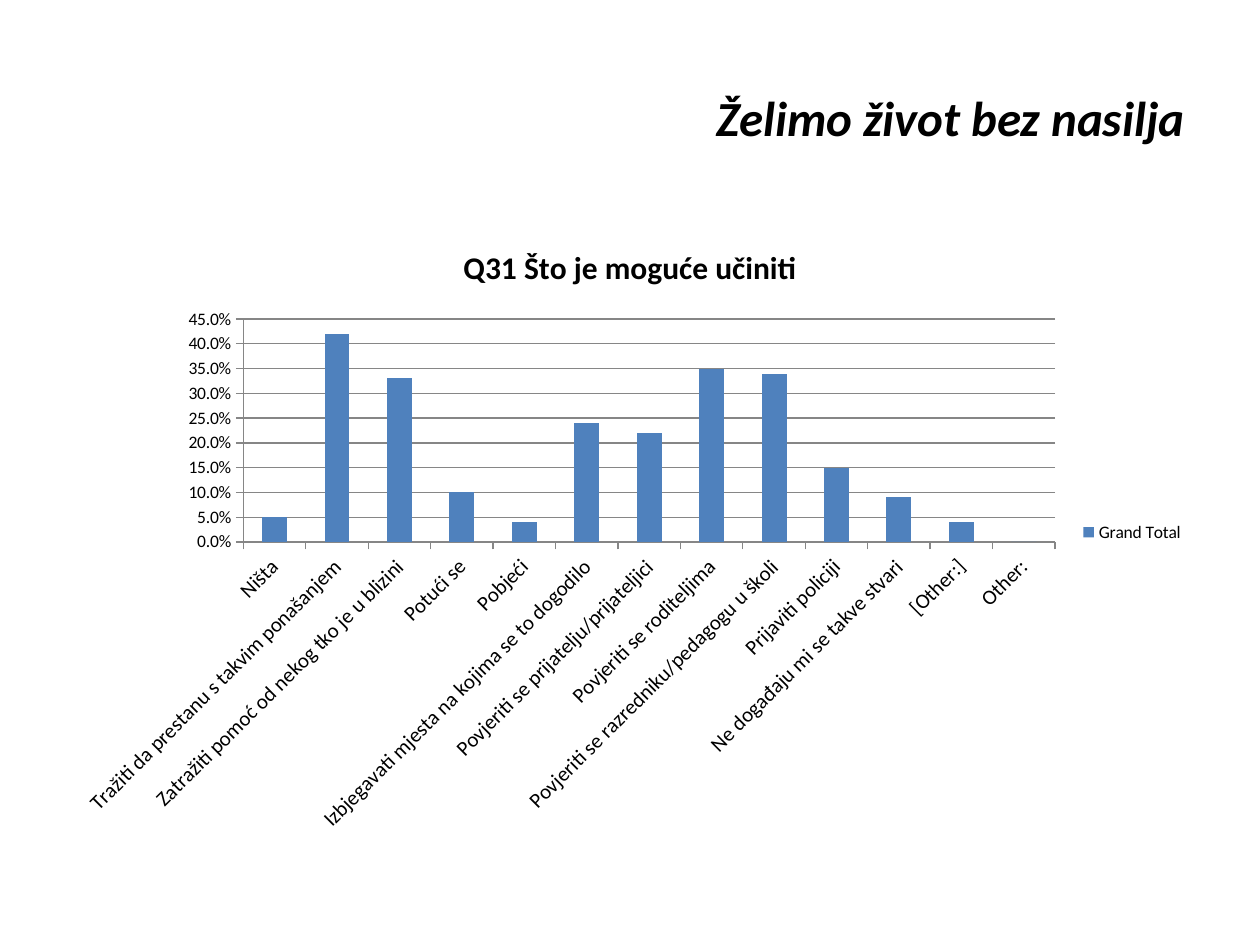
"""Build the survey slide with one column chart."""
from typing import Any, NamedTuple

from pptx import Presentation
from pptx.chart.data import CategoryChartData
from pptx.dml.color import RGBColor
from pptx.enum.chart import XL_CHART_TYPE, XL_LEGEND_POSITION, XL_TICK_MARK
from pptx.enum.text import MSO_ANCHOR, PP_ALIGN
from pptx.oxml.ns import qn
from pptx.util import Inches, Pt


class Answer(NamedTuple):
    label: str
    share: float


ANSWERS = [
    Answer("Ništa", 0.05),
    Answer("Tražiti da prestanu s takvim ponašanjem", 0.42),
    Answer("Zatražiti pomoć od nekog tko je u blizini", 0.33),
    Answer("Potući se", 0.1),
    Answer("Pobjeći", 0.04),
    Answer("Izbjegavati mjesta na kojima se to dogodilo", 0.24),
    Answer("Povjeriti se prijatelju/prijateljici", 0.22),
    Answer("Povjeriti se roditeljima", 0.35),
    Answer("Povjeriti se razredniku/pedagogu u školi", 0.34),
    Answer("Prijaviti policiji", 0.15),
    Answer("Ne događaju mi se takve stvari", 0.09),
    Answer("[Other:]", 0.04),
    Answer("Other:", 0),
]
BASE = {"name": "Calibri", "size": Pt(10), "bold": False}
HEAD = BASE | {"size": Pt(28), "bold": True, "italic": True}
TOPIC = BASE | {"size": Pt(18), "bold": True}
LABEL = BASE | {"size": Pt(12)}


def tint(item: Any, color: str) -> None:
    item.rgb = RGBColor.from_string(color)


def style(font: Any, form: dict[str, Any]) -> None:
    for key, value in form.items():
        setattr(font, key, value)
    tint(font.color, "000000")


def rule(line: Any) -> None:
    line.width = Pt(0.75)
    tint(line.color, "868686")


def add_head(slide: Any) -> None:
    head = slide.shapes.title
    head.left, head.top = Inches(0.5), Inches(0.3)
    head.width, head.height = Inches(9), Inches(1.25)
    frame = head.text_frame
    frame.text = "Želimo život bez nasilja"
    frame.vertical_anchor = MSO_ANCHOR.MIDDLE
    para = frame.paragraphs[0]
    para.alignment = PP_ALIGN.RIGHT
    style(para.runs[0].font, HEAD)


def add_graph(slide: Any, answers: list[Answer]) -> None:
    data = CategoryChartData(number_format="0.0%")
    data.categories = [answer.label for answer in answers]
    data.add_series("Grand Total", [answer.share for answer in answers])
    chart = slide.shapes.add_chart(
        XL_CHART_TYPE.COLUMN_CLUSTERED,
        Inches(0.5), Inches(1.75), Inches(9), Inches(4.95), data,
    ).chart
    style(chart.font, BASE)

    chart.has_title = True
    topic = chart.chart_title.text_frame
    topic.text = "Q31 Što je moguće učiniti"
    style(topic.paragraphs[0].runs[0].font, TOPIC)
    chart.has_legend = True
    chart.legend.position = XL_LEGEND_POSITION.RIGHT
    chart.legend.include_in_layout = False

    plot = chart.plots[0]
    plot.vary_by_categories = False
    plot.gap_width = 150
    fill = plot.series[0].format.fill
    fill.solid()
    tint(fill.fore_color, "4F81BD")

    for axis, form in ((chart.category_axis, LABEL), (chart.value_axis, BASE)):
        axis.major_tick_mark = XL_TICK_MARK.OUTSIDE
        axis.minor_tick_mark = XL_TICK_MARK.NONE
        rule(axis.format.line)
        style(axis.tick_labels.font, form)
    body = chart.category_axis._element.find(qn("c:txPr")).find(qn("a:bodyPr"))
    body.set("rot", str(-45 * 60000))

    scale = chart.value_axis
    scale.minimum_scale, scale.maximum_scale, scale.major_unit = 0, 0.45, 0.05
    scale.tick_labels.number_format = "0.0%"
    scale.tick_labels.number_format_is_linked = False
    scale.has_major_gridlines = True
    rule(scale.major_gridlines.format.line)


def main() -> None:
    deck = Presentation()
    deck.slide_width, deck.slide_height = Inches(10), Inches(7.5)
    slide = deck.slides.add_slide(deck.slide_layouts[5])
    add_head(slide)
    add_graph(slide, ANSWERS)
    deck.save("out.pptx")


if __name__ == "__main__":
    main()
